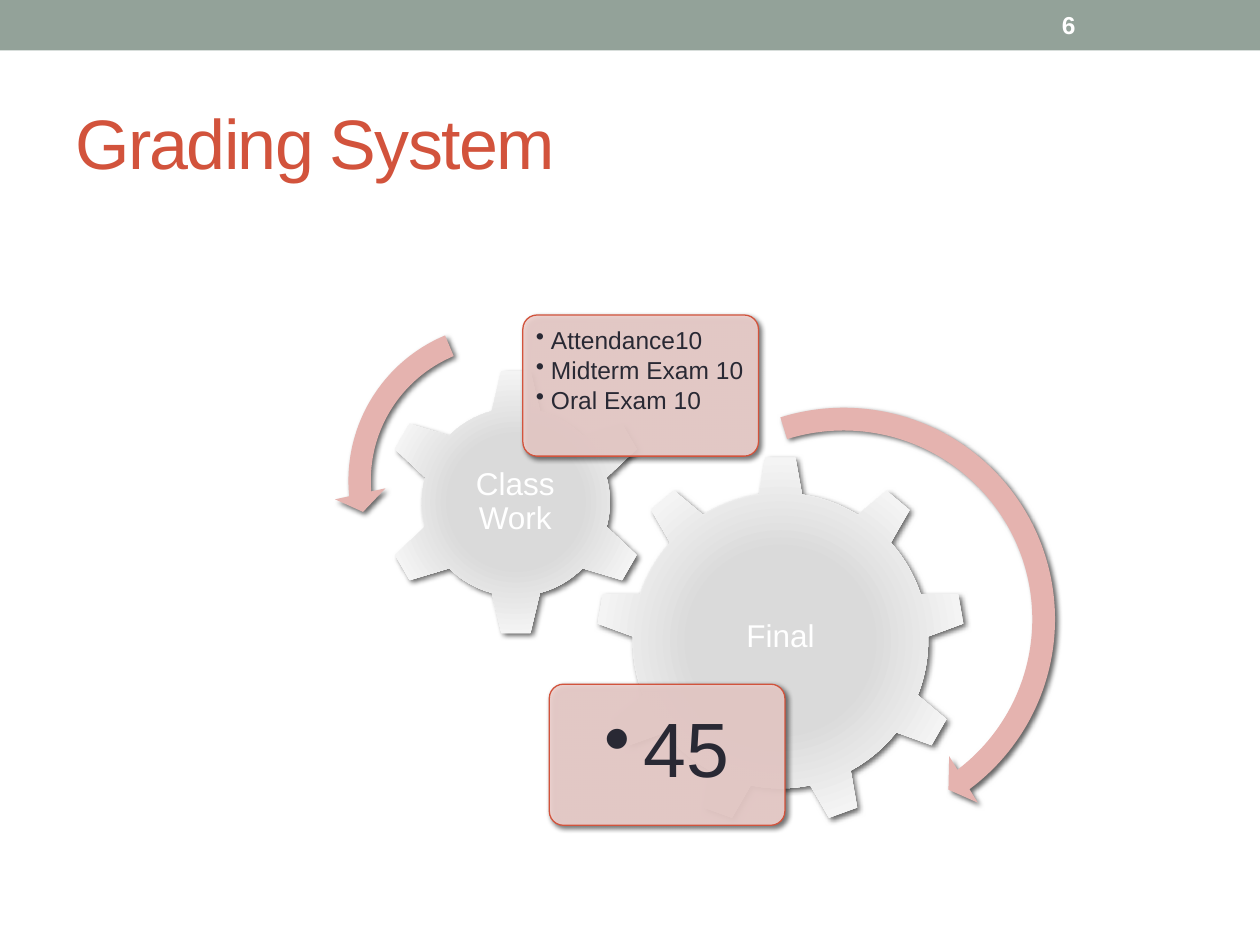
from dataclasses import dataclass

from pptx import Presentation
from pptx import util as u
from pptx.dml.color import RGBColor
from pptx.enum import shapes, text
from pptx.oxml import parse_xml
from pptx.oxml.ns import nsdecls, qn

COLORS = {
    "bar": "93A299", "accent": "D2533C", "card": "EED1CE", "arrow": "E5B3AF",
    "gear": "DADADA", "rim": "F4F4F4", "white": "FFFFFF", "ink": "292934",
    "shadow": "000000",
}
COLUMNS, ROWS = 100, 75
CELL = u.Inches(0.1)
FONT = "Arial"
KIND = shapes.MSO_SHAPE
MIDDLE, TOP = text.MSO_ANCHOR.MIDDLE, text.MSO_ANCHOR.TOP
LEFT, CENTER = text.PP_ALIGN.LEFT, text.PP_ALIGN.CENTER


@dataclass
class Box:
    column: float
    row: float
    columns: float
    rows: float

    def lengths(self) -> list:
        return [round(cells * CELL) for cells in
                (self.column, self.row, self.columns, self.rows)]

    def inset(self, gap: float) -> "Box":
        return Box(self.column + gap, self.row + gap,
                   self.columns - 2 * gap, self.rows - 2 * gap)


@dataclass
class Gear:
    kind: KIND
    box: Box
    label: str
    label_box: Box


@dataclass
class Card:
    box: Box
    items: list
    size: int
    margin: float
    indent: float
    align: text.PP_ALIGN


@dataclass
class Arrow:
    kind: KIND
    box: Box
    adjustments: tuple


GEARS = [
    Gear(KIND.GEAR_9, Box(47.3, 36.2, 29.3, 29.3), "Final", Box(53.2, 43, 17.5, 15.1)),
    Gear(KIND.GEAR_6, Box(30.3, 29.2, 21.3, 21.3), "Class Work", Box(35.6, 34.6, 10.6, 10.5)),
]
CARDS = [
    Card(Box(43.6, 54.3, 18.7, 11.2), ["45"], 44, 0.18, 0.31, CENTER),
    Card(Box(41.5, 25, 18.7, 11.2), ["Attendance10", "Midterm Exam 10", "Oral Exam 10"],
         14, 0.07, 0.12, LEFT),
]
ARROWS = [
    Arrow(KIND.CIRCULAR_ARROW, Box(48.9, 31.1, 36.1, 36.1),
          (0.05, 3.13, 31.91, 151.57, 0.06)),
    Arrow(KIND.LEFT_CIRCULAR_ARROW, Box(26.5, 24.5, 27.3, 27.3),
          (0.065, 4.3, 104.89, 148.38, 0.075)),
]


def rgb(name: str) -> RGBColor:
    return RGBColor.from_string(COLORS[name])


def apply(target, values: dict) -> None:
    for name, value in values.items():
        setattr(target, name, value)


def write(shape, lines: list, size: int, color: str, margin: float = 0.1,
          anchor=MIDDLE, bold: bool = False, tracking: int = 0, **layout) -> None:
    frame = shape.text_frame
    apply(frame, {"word_wrap": True, "auto_size": text.MSO_AUTO_SIZE.NONE,
                  "vertical_anchor": anchor})
    for side in ("left", "right", "top", "bottom"):
        setattr(frame, f"margin_{side}", u.Inches(margin if margin != 0.1 or side in
                                                  ("left", "right") else 0.05))
    frame.text = "\n".join(lines)
    for paragraph in frame.paragraphs:
        apply(paragraph, layout)
        run = paragraph.runs[0]
        apply(run.font, {"name": FONT, "size": u.Pt(size), "bold": bold})
        run.font.color.rgb = rgb(color)
        if tracking:
            run._r.get_or_add_rPr().set("spc", str(tracking))


def add_text(slide, box: Box, lines: list, size: int, color: str, **layout):
    shape = slide.shapes.add_textbox(*box.lengths())
    write(shape, lines, size, color, **layout)
    return shape


def add_plain(slide, kind: KIND, box: Box, fill: str = ""):
    shape = slide.shapes.add_shape(kind, *box.lengths())
    shape.shadow.inherit = False
    shape.line.fill.background()
    if fill:
        shape.fill.solid()
        shape.fill.fore_color.rgb = rgb(fill)
    return shape


def add_shadow(shape) -> None:
    shape._element.spPr.find(qn("a:effectLst")).append(parse_xml(
        f'<a:outerShdw {nsdecls("a")} blurRad="{u.Pt(3)}" dist="{u.Pt(2)}" dir="2700000" '
        f'rotWithShape="0"><a:srgbClr val="{COLORS["shadow"]}"><a:alpha val="60000"/>'
        '</a:srgbClr></a:outerShdw>'))


def add_gear(slide, gear: Gear) -> None:
    shape = add_plain(slide, gear.kind, gear.box)
    add_shadow(shape)
    stops = "".join(
        f'<a:gs pos="{share * 1000}"><a:srgbClr val="{COLORS[name]}"/></a:gs>'
        for share, name in ((0, "gear"), (34, "gear"), (70, "rim"), (100, "white")))
    shape._element.spPr.find(qn("a:prstGeom")).addnext(parse_xml(
        f'<a:gradFill {nsdecls("a")} rotWithShape="1"><a:gsLst>{stops}</a:gsLst>'
        '<a:path path="circle"><a:fillToRect l="100000" t="100000" r="100000" b="100000"/>'
        '</a:path></a:gradFill>'))
    add_text(slide, gear.label_box, [gear.label], 18, "white", margin=0.03,
             alignment=CENTER, line_spacing=0.9, space_after=u.Pt(6.3))


def add_card(slide, card: Card) -> None:
    shape = add_plain(slide, KIND.ROUNDED_RECTANGLE, card.box, "card")
    shape.adjustments[0] = 0.1
    shape.line.color.rgb = rgb("accent")
    shape.line.width = u.Pt(0.75)
    color = shape._element.spPr.find(qn("a:solidFill"))[0]
    color.append(parse_xml(f'<a:alpha {nsdecls("a")} val="90000"/>'))
    add_shadow(shape)
    label = add_text(slide, card.box.inset(0.33), card.items, card.size, "ink",
                     margin=card.margin, anchor=TOP, alignment=card.align, level=1,
                     line_spacing=0.9, space_after=u.Pt(card.size * 0.15))
    indent = u.Inches(card.indent)
    for paragraph in label.text_frame.paragraphs:
        properties = paragraph._p.get_or_add_pPr()
        properties.set("marL", str(indent))
        properties.set("indent", str(-indent))
        properties.append(parse_xml(f'<a:buChar {nsdecls("a")} char="•"/>'))


def add_arrow(slide, arrow: Arrow) -> None:
    shape = add_plain(slide, arrow.kind, arrow.box, "arrow")
    for index, value in enumerate(arrow.adjustments):
        shape.adjustments[index] = value
    add_shadow(shape)


def main() -> None:
    presentation = Presentation()
    apply(presentation, {"slide_width": COLUMNS * CELL, "slide_height": ROWS * CELL})
    slide = presentation.slides.add_slide(presentation.slide_layouts[5])
    add_plain(slide, KIND.RECTANGLE, Box(0, 0, COLUMNS, 4), "bar")
    title = slide.shapes.title
    apply(title, dict(zip(("left", "top", "width", "height"),
                          Box(5, 5.8, 90, 10.8).lengths())))
    write(title, ["Grading System"], 40, "accent", tracking=-100, alignment=LEFT)
    for gear, card in zip(GEARS, CARDS):
        add_gear(slide, gear)
        add_card(slide, card)
    for arrow in ARROWS:
        add_arrow(slide, arrow)
    add_text(slide, Box(83.3, 0.2, 11.7, 3.6), ["6"], 14, "white", bold=True)
    presentation.save("out.pptx")


if __name__ == "__main__":
    main()
